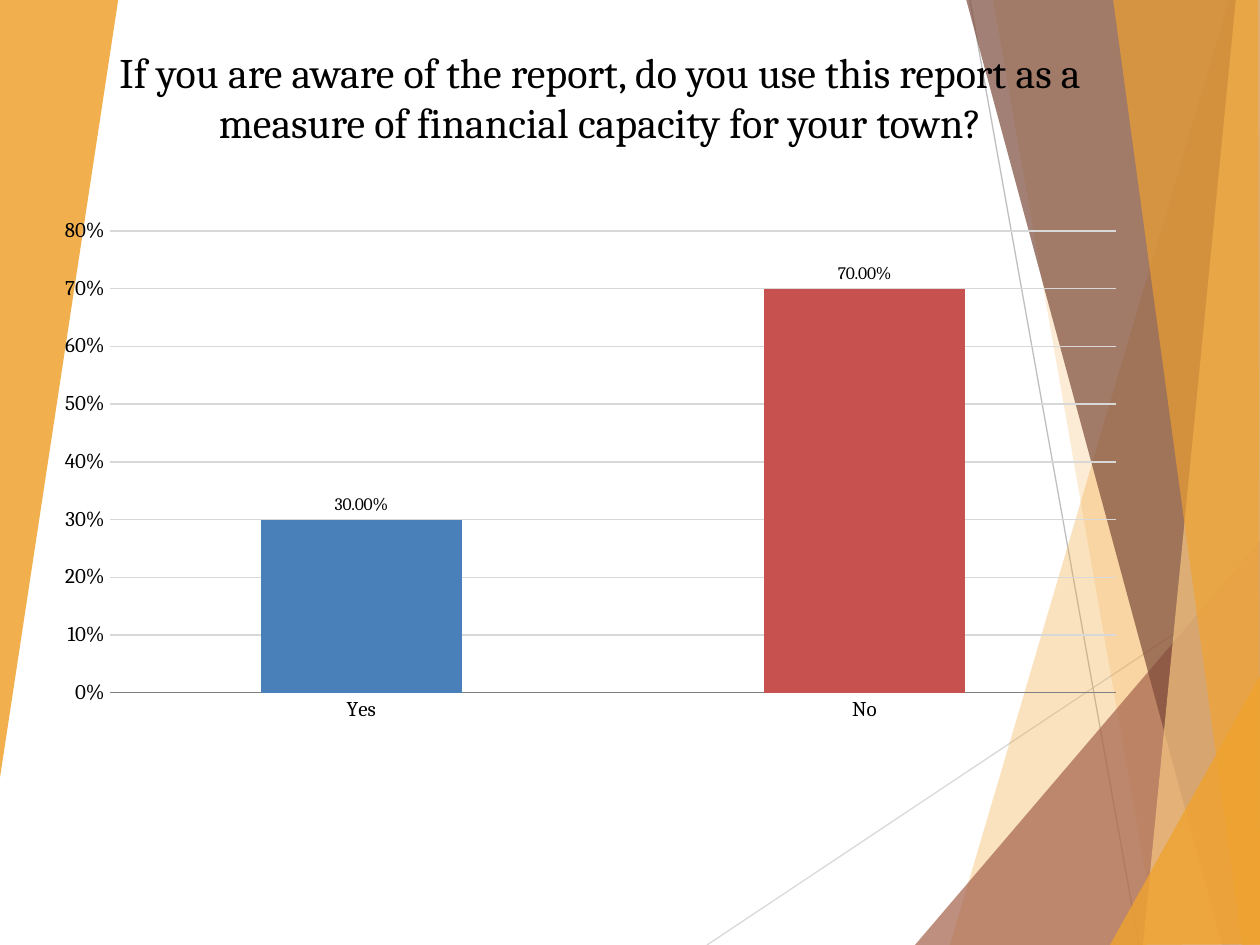
from lxml import etree
from pptx import Presentation
from pptx import util as u
from pptx.chart.data import CategoryChartData
from pptx.dml.color import RGBColor
from pptx.enum import chart as ch, shapes, text
from pptx.oxml import parse_xml
from pptx.oxml.ns import nsdecls, qn

PX = 914400 / 126  # EMU per pixel
FONT = "Cambria"

BLACK = RGBColor(0x00, 0x00, 0x00)
AMBER = RGBColor(0xF0, 0xA2, 0x2E)
PALE_AMBER = RGBColor(0xF6, 0xC7, 0x82)
RUST = RGBColor(0xA5, 0x64, 0x4E)
BROWN = RGBColor(0x7C, 0x4B, 0x3B)
BLUE = RGBColor(0x49, 0x80, 0xBA)
RED = RGBColor(0xC6, 0x51, 0x4E)
LIGHT_GREY = RGBColor(0xD9, 0xD9, 0xD9)
MID_GREY = RGBColor(0xBF, 0xBF, 0xBF)
AXIS_GREY = RGBColor(0x80, 0x80, 0x80)
GRID_GREY = RGBColor(0xD8, 0xD8, 0xD8)

# Rays: start, end, colour
RAYS = [
    ((707, 945), (1261, 576), LIGHT_GREY),
    ((970, 0), (1139, 945), MID_GREY),
]
# Facets: corner points, colour, opacity in percent
FACETS = [
    ([(1229, 0), (950, 945), (1262, 946), (1261, 1)], AMBER, 30),
    ([(993, -1), (1158, 945), (1261, 945), (1261, -1)], AMBER, 20),
    ([(915, 945), (1260, 541), (1261, 945)], RUST, 72),
    ([(966, -1), (1222, 945), (1261, 944), (1261, -1)], BROWN, 70),
    ([(1236, -1), (1143, 945), (1261, 945), (1260, -1)], PALE_AMBER, 70),
    ([(1113, -1), (1242, 945), (1260, 945), (1258, -1)], AMBER, 65),
    ([(1110, 945), (1261, 674), (1261, 944)], AMBER, 80),
    ([(-1, 0), (118, -1), (118, 1), (-1, 784)], AMBER, 85),
]


def px(*lengths):
    return [u.Emu(round(length * PX)) for length in lengths]


def format_font(font, size, color=BLACK):
    font.name = FONT
    font.size = u.Pt(size)
    font.color.rgb = color


def write_text(frame, words, *, size, color=BLACK, align=text.PP_ALIGN.CENTER,
               anchor=text.MSO_ANCHOR.MIDDLE):
    frame.word_wrap = True
    frame.auto_size = text.MSO_AUTO_SIZE.NONE
    frame.vertical_anchor = anchor
    paragraph = frame.paragraphs[0]
    paragraph.alignment = align
    run = paragraph.add_run()
    run.text = words
    format_font(run.font, size, color)


def add_ray(slide, start, end, color):
    ray = slide.shapes.add_connector(shapes.MSO_CONNECTOR.STRAIGHT, *px(*start, *end))
    ray.line.color.rgb = color
    ray.line.width = u.Pt(0.75)
    etree.SubElement(ray._element.spPr, qn("a:effectLst"))


def add_facet(slide, corners, color, opacity):
    outline = slide.shapes.build_freeform(*corners[0], scale=PX)
    outline.add_line_segments(corners[1:], close=True)
    facet = outline.convert_to_shape()
    facet.shadow.inherit = False
    facet.line.fill.background()
    facet.fill.solid()
    facet.fill.fore_color.rgb = color
    tint = facet._element.spPr.find(".//" + qn("a:srgbClr"))
    etree.SubElement(tint, qn("a:alpha"), val=str(opacity * 1000))


def add_title(slide, words):
    title = slide.shapes.title
    title.left, title.top, title.width, title.height = px(53, 9, 1094, 175)
    write_text(title.text_frame, words, size=24)
    # Bring the heading in front of the facets
    slide.shapes._spTree.append(title._element)


def fix_plot_area(chart, **fractions):
    """Place the inner plot area by fractions of the chart's size."""
    area = chart._chartSpace.chart.plotArea
    for old in area.findall(qn("c:layout")):
        area.remove(old)
    places = "".join(f'<c:{key} val="{value}"/>' for key, value in fractions.items())
    area.insert(0, parse_xml(
        f'<c:layout {nsdecls("c")}><c:manualLayout><c:layoutTarget val="inner"/>'
        f'<c:xMode val="edge"/><c:yMode val="edge"/>{places}'
        '</c:manualLayout></c:layout>'))


def format_axis(axis):
    axis.major_tick_mark = axis.minor_tick_mark = ch.XL_TICK_MARK.NONE
    format_font(axis.tick_labels.font, 12)


def add_answer_chart(slide, answers):
    data = CategoryChartData(number_format="0.00%")
    data.categories = [answer for answer, _, _ in answers]
    data.add_series("Series 1", [share for _, share, _ in answers])
    chart = slide.shapes.add_chart(
        ch.XL_CHART_TYPE.COLUMN_CLUSTERED, *px(44, 210, 1094, 525), data).chart
    chart.has_title = chart.has_legend = False
    format_font(chart.font, 18)
    fix_plot_area(chart, x=0.06, y=0.04, w=0.92, h=0.88)

    # Axes
    format_axis(chart.category_axis)
    chart.category_axis.format.line.color.rgb = AXIS_GREY
    chart.category_axis.format.line.width = u.Pt(0.75)
    shares = chart.value_axis
    format_axis(shares)
    shares.minimum_scale, shares.maximum_scale, shares.major_unit = 0, 0.8, 0.1
    shares.tick_labels.number_format = "0%"
    shares.tick_labels.number_format_is_linked = False
    shares.format.line.fill.background()
    shares.major_gridlines.format.line.color.rgb = GRID_GREY
    shares.major_gridlines.format.line.width = u.Pt(0.75)

    # Columns and their labels
    plot = chart.plots[0]
    plot.gap_width = 150
    plot.vary_by_categories = False
    for index, (_, _, color) in enumerate(answers):
        fill = plot.series[0].points[index].format.fill
        fill.solid()
        fill.fore_color.rgb = color
    labels = plot.series[0].data_labels
    labels.show_value = True
    labels.number_format = "0.00%"
    labels.number_format_is_linked = False
    labels.position = ch.XL_LABEL_POSITION.OUTSIDE_END
    format_font(labels.font, 10)


def main():
    deck = Presentation()
    deck.slide_width, deck.slide_height = px(1260, 945)
    slide = deck.slides.add_slide(deck.slide_layouts[5])

    # Backdrop
    for ray in RAYS:
        add_ray(slide, *ray)
    for facet in FACETS:
        add_facet(slide, *facet)

    # Question and answers
    add_title(slide, "If you are aware of the report, do you use this report "
                     "as a measure of financial capacity for your town?")
    add_answer_chart(slide, [("Yes", 0.3, BLUE), ("No", 0.7, RED)])
    deck.save("out.pptx")


if __name__ == "__main__":
    main()
